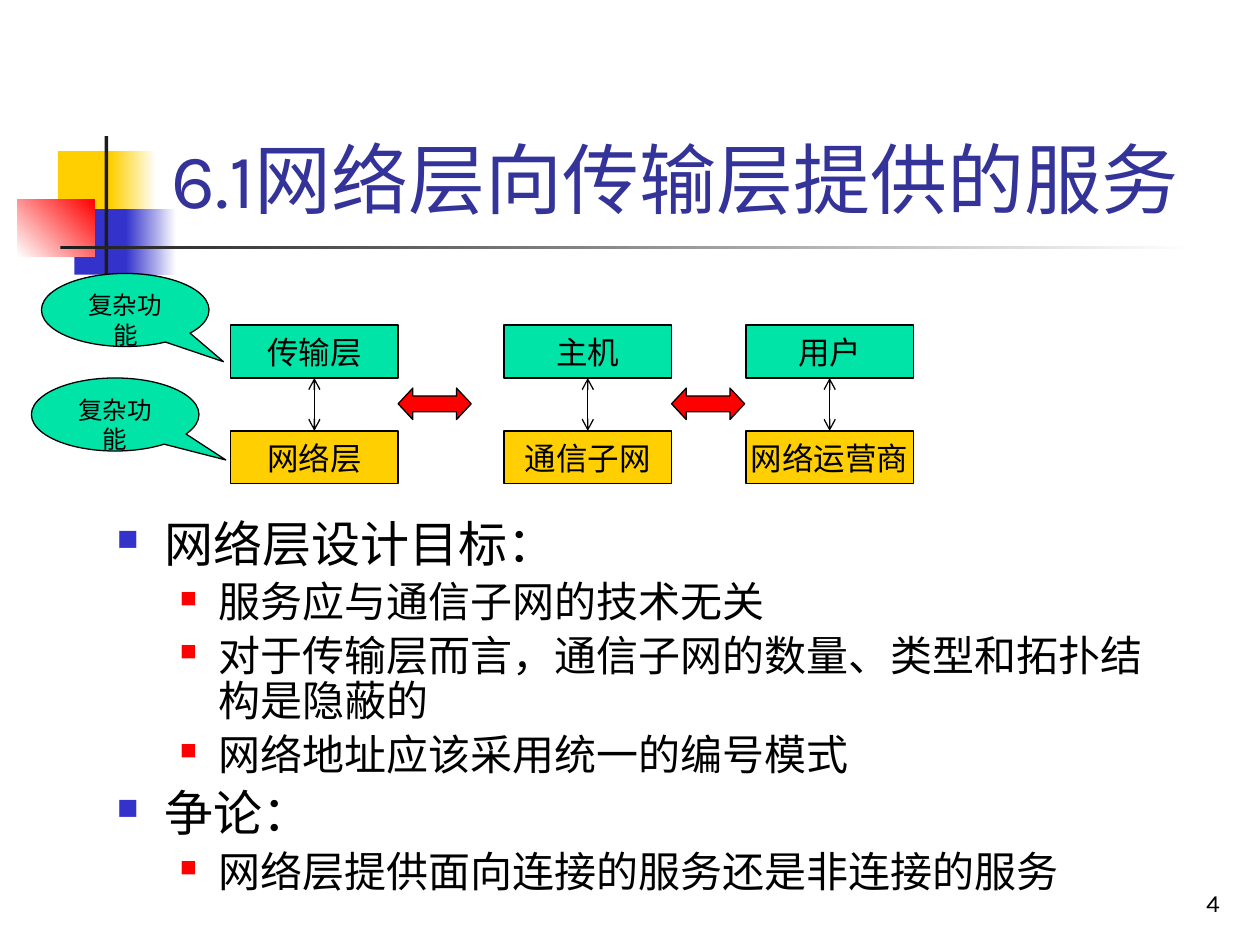
import pptx
import pptx.util
from pptx.dml.color import RGBColor
from pptx.enum.shapes import MSO_CONNECTOR, MSO_SHAPE
from pptx.enum.text import MSO_ANCHOR, MSO_AUTO_SIZE, PP_ALIGN
from pptx.oxml.ns import qn
from lxml import etree

# ---- Content ----
TITLE = "6.1网络层向传输层提供的服务"
PAGE = "4"
COLUMNS = [  # left, upper box, lower box
    (183, "传输层", "网络层"),
    (400, "主机", "通信子网"),
    (592, "用户", "网络运营商"),
]
CALLOUTS = [  # left, top, text, tip offset
    (33, 217, "复杂功能", (0.586, 0.708)),
    (25, 300, "复杂功能", (0.66, 0.622)),
]
OUTLINE = [  # level, text
    (0, "网络层设计目标："),
    (1, "服务应与通信子网的技术无关"),
    (1, "对于传输层而言，通信子网的数量、类型和拓扑结构是隐蔽的"),
    (1, "网络地址应该采用统一的编号模式"),
    (0, "争论："),
    (1, "网络层提供面向连接的服务还是非连接的服务"),
]

# ---- Format ----
PX = 9144  # 100 px to the inch
FONT = "Karla"
COLORS = {
    "white": "FFFFFF", "black": "000000", "ink": "1C1C1C", "title": "333399",
    "yellow": "FFCF01", "blue": "3333CC", "red": "FF0000", "green": "00E4A8",
}
ORNAMENT = [  # left, top, width, height, colours, gradient angle
    (46, 120, 48, 52, ["yellow"], 0),
    (88, 120, 36, 52, ["yellow", "white"], 0),
    (59, 166, 46, 52, ["blue"], 0),
    (100, 166, 40, 52, ["blue", "white"], 0),
    (14, 158, 61, 46, ["white", "red"], 45),
    (83, 108, 3, 115, ["ink"], 0),
    (48, 195, 900, 3, ["ink", "white"], 0),
]
LEVELS = [
    {"size": 28, "margin": 38, "hang": 38, "bullet": "blue", "scale": 60},
    {"size": 24, "margin": 81, "hang": 31, "bullet": "red", "scale": 55},
]
BOX_W, BOX_H, UPPER_Y, LOWER_Y = 133, 42, 258, 342
ARROW_W, ARROW_H = 58, 25
CALLOUT_H = 58


def rgb(name):
    return RGBColor.from_string(COLORS[name])


def box(*lengths):
    return [n * PX for n in lengths]


def put_text(paragraph, text, size, color="black", **formats):
    run = paragraph.add_run()
    run.text = text
    for key, value in {"name": FONT, "size": pptx.util.Pt(size)}.items():
        setattr(run.font, key, value)
    run.font.color.rgb = rgb(color)
    for key, value in formats.items():
        setattr(paragraph, key, value)


def set_frame(frame, **formats):
    for key, value in {"word_wrap": True, "auto_size": MSO_AUTO_SIZE.NONE, **formats}.items():
        setattr(frame, key, value)
    return frame


def add_figure(kind, bounds, colors, outlined=True, angle=0):
    figure = slide.shapes.add_shape(kind, *box(*bounds))
    figure.shadow.inherit = False
    if len(colors) == 1:
        figure.fill.solid()
        figure.fill.fore_color.rgb = rgb(colors[0])
    else:
        figure.fill.gradient()
        figure.fill.gradient_angle = angle
        for position, (stop, color) in enumerate(zip(figure.fill.gradient_stops, colors)):
            stop.position = position
            stop.color.rgb = rgb(color)
    if outlined:
        figure.line.color.rgb = rgb("black")
        figure.line.width = pptx.util.Pt(0.75)
    else:
        figure.line.fill.background()
    return figure


def add_layer(left, top, text, color):
    layer = add_figure(MSO_SHAPE.RECTANGLE, (left, top, BOX_W, BOX_H), [color])
    frame = set_frame(layer.text_frame, word_wrap=False, vertical_anchor=MSO_ANCHOR.MIDDLE)
    put_text(frame.paragraphs[0], text, 18, alignment=PP_ALIGN.CENTER)
    return layer


def join_layers(upper, lower):
    link = slide.shapes.add_connector(MSO_CONNECTOR.STRAIGHT, 0, 0, 0, 0)
    link.begin_connect(upper, 2)
    link.end_connect(lower, 0)
    link.line.color.rgb = rgb("black")
    link.line.width = pptx.util.Pt(0.75)
    for end in ("a:headEnd", "a:tailEnd"):
        etree.SubElement(link.line._get_or_add_ln(), qn(end), type="arrow")
    etree.SubElement(link._element.spPr, qn("a:effectLst"))


def add_bullet(paragraph, level):
    props = paragraph._p.get_or_add_pPr()
    props.set("marL", str(level["margin"] * PX))
    props.set("indent", str(-level["hang"] * PX))
    color = etree.SubElement(props, qn("a:buClr"))
    etree.SubElement(color, qn("a:srgbClr"), val=COLORS[level["bullet"]])
    etree.SubElement(props, qn("a:buSzPct"), val=str(level["scale"] * 1000))
    etree.SubElement(props, qn("a:buChar"), char="■")


prs = pptx.Presentation()
prs.slide_width, prs.slide_height = box(1000, 750)
slide = prs.slides.add_slide(prs.slide_layouts[5])

# Corner ornament and rule
for *bounds, colors, angle in ORNAMENT:
    add_figure(MSO_SHAPE.RECTANGLE, bounds, colors, outlined=False, angle=angle)

# Title, in front of the ornament
title = slide.shapes.title
slide.shapes.element.append(title._element)
title.left, title.top, title.width, title.height = box(126, 23, 852, 160)
frame = set_frame(title.text_frame, vertical_anchor=MSO_ANCHOR.BOTTOM)
put_text(frame.paragraphs[0], TITLE, 44, "title", alignment=PP_ALIGN.LEFT)

# Page number
page = slide.shapes.add_textbox(*box(770, 683, 208, 50))
frame = set_frame(page.text_frame, vertical_anchor=MSO_ANCHOR.BOTTOM)
put_text(frame.paragraphs[0], PAGE, 14, alignment=PP_ALIGN.RIGHT)

# Outline
outline = slide.shapes.add_textbox(*box(83, 408, 850, 300))
frame = set_frame(outline.text_frame)
for index, (depth, text) in enumerate(OUTLINE):
    level = LEVELS[depth]
    paragraph = frame.add_paragraph() if index else frame.paragraphs[0]
    put_text(paragraph, text, level["size"], level=depth, line_spacing=0.9,
             space_before=pptx.util.Pt(level["size"] * 0.2))
    add_bullet(paragraph, level)

# Layer pairs, with a double arrow between neighbours
arrow_y = (UPPER_Y + LOWER_Y + BOX_H - ARROW_H) // 2
for index, (left, upper_text, lower_text) in enumerate(COLUMNS):
    upper = add_layer(left, UPPER_Y, upper_text, "green")
    lower = add_layer(left, LOWER_Y, lower_text, "yellow")
    join_layers(upper, lower)
    if index < len(COLUMNS) - 1:
        arrow = add_figure(MSO_SHAPE.LEFT_RIGHT_ARROW,
                           (left + BOX_W, arrow_y, ARROW_W, ARROW_H), ["red"])
        arrow.adjustments[1] = 0.467

# Callouts
for left, top, text, tip in CALLOUTS:
    callout = add_figure(MSO_SHAPE.OVAL_CALLOUT, (left, top, BOX_W, CALLOUT_H), ["green"])
    for index, offset in enumerate(tip):
        callout.adjustments[index] = offset
    frame = set_frame(callout.text_frame, vertical_anchor=MSO_ANCHOR.TOP)
    put_text(frame.paragraphs[0], text, 14, alignment=PP_ALIGN.CENTER)

prs.save("out.pptx")
